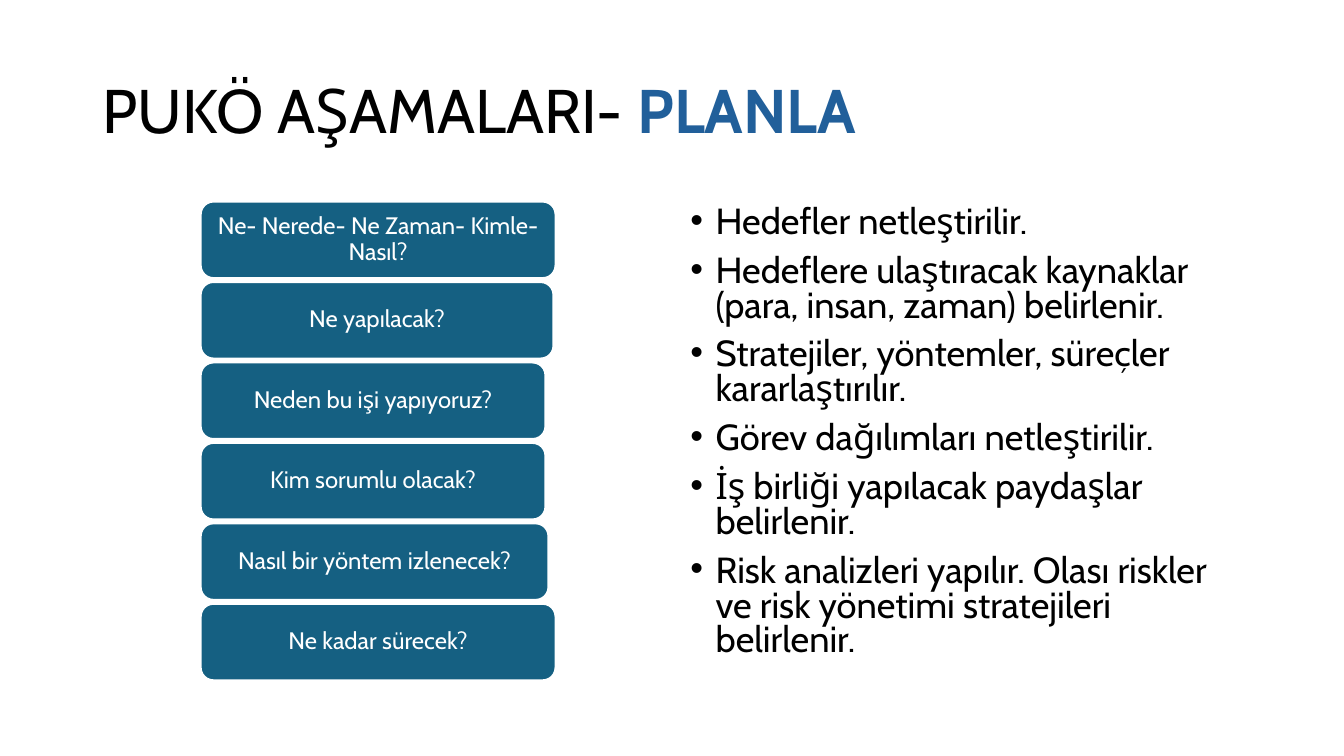
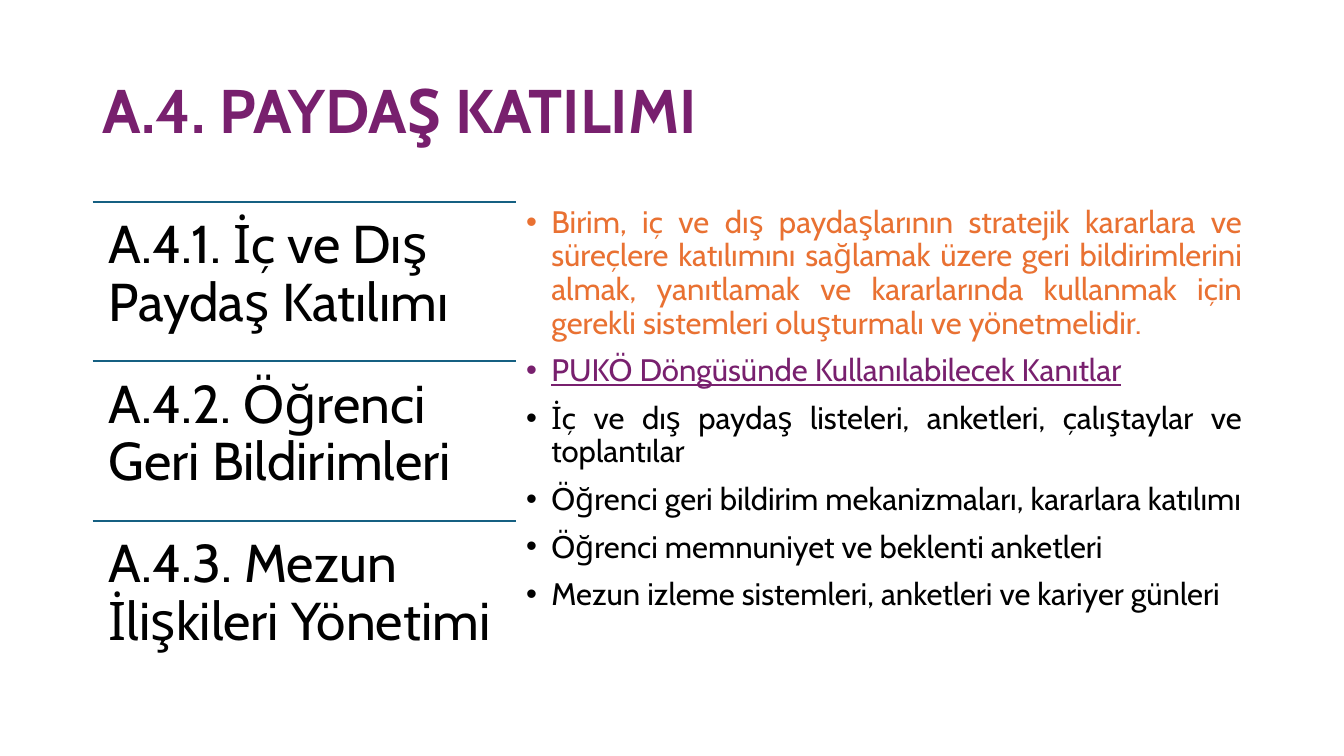
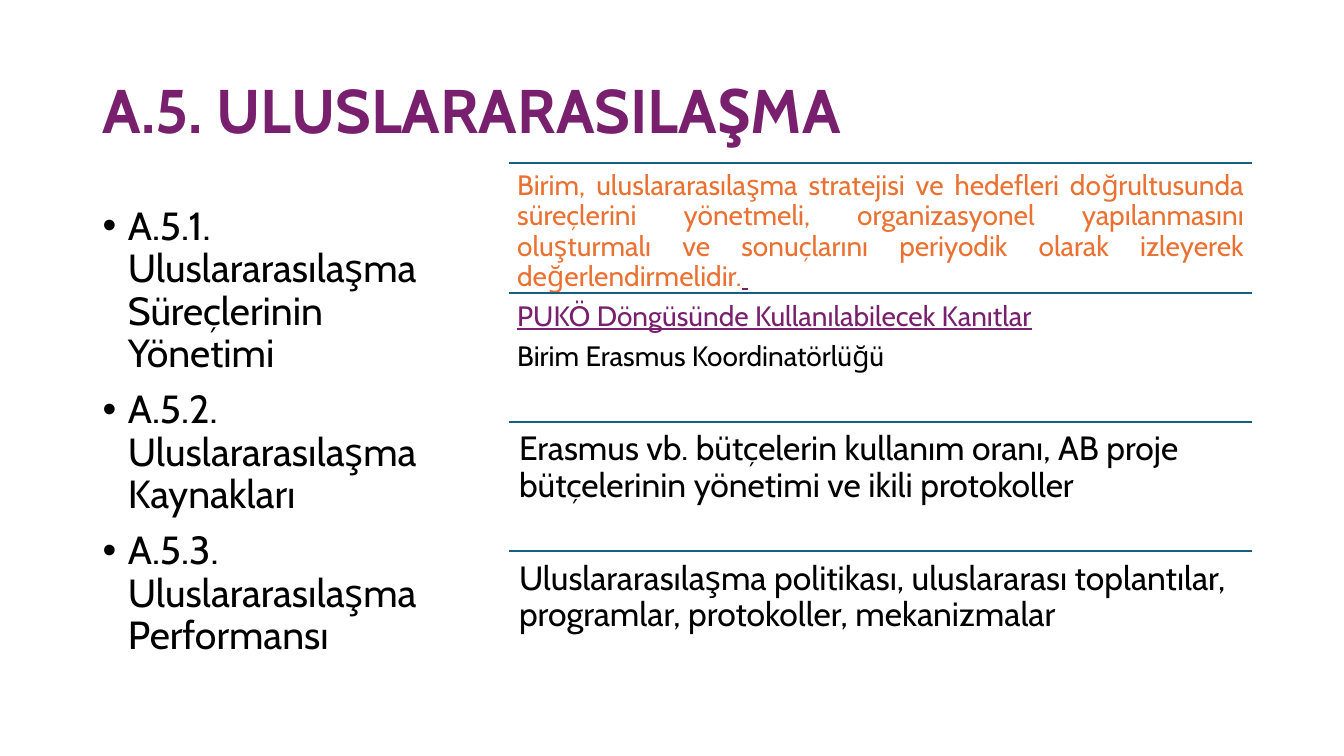
"""Build three slides on the PUKÖ cycle and its quality criteria."""
from lxml import etree
from pptx import Presentation
from pptx import util as u
from pptx.dml.color import RGBColor
from pptx.enum import shapes, text
from pptx.oxml.ns import qn

BLACK, WHITE, TEAL = "000000", "FFFFFF", "156082"
BLUE, PURPLE, ORANGE = "215F9A", "78206E", "E97132"
LEFT, CENTER, JUSTIFY = text.PP_ALIGN.LEFT, text.PP_ALIGN.CENTER, text.PP_ALIGN.JUSTIFY
TOP, MIDDLE = text.MSO_ANCHOR.TOP, text.MSO_ANCHOR.MIDDLE
EVIDENCE = [("PUKÖ Döngüsünde Kullanılabilecek Kanıtlar", {"color": PURPLE, "underline": True})]


def rgb(value):
    """Turn a hex string into a colour."""
    return RGBColor.from_string(value)


class Deck:
    """Hold the shared style and the current slide."""

    font = "Cabin"

    def __init__(self):
        """Start an empty widescreen presentation."""
        self.prs = Presentation()
        self.prs.slide_width, self.prs.slide_height = u.Inches(13.33), u.Inches(7.5)
        self.s = None

    def slide(self, title):
        """Add a blank slide with its title."""
        self.s = self.prs.slides.add_slide(self.prs.slide_layouts[6])
        self.text((0.92, 0.4, 11.5, 1.45), [title], 44, anchor=MIDDLE)

    def fill_text(self, sp, paragraphs, size, color=BLACK, align=LEFT, anchor=TOP,
                  margins=(0.1, 0.05), spacing=0.9, before=0, after=0, bullet=False):
        """Fill a shape with formatted paragraphs."""
        tf = sp.text_frame
        tf.word_wrap, tf.vertical_anchor = True, anchor
        tf.margin_left = tf.margin_right = u.Inches(margins[0])
        tf.margin_top = tf.margin_bottom = u.Inches(margins[1])
        for i, runs in enumerate(paragraphs):
            p = tf.paragraphs[0] if i == 0 else tf.add_paragraph()
            p.alignment, p.line_spacing = align, spacing
            p.space_before, p.space_after = u.Pt(before), u.Pt(after)
            if bullet:
                self.bullet(p)
            for words, changes in [(runs, {})] if isinstance(runs, str) else runs:
                r = p.add_run()
                r.text = words
                style = {"name": self.font, "size": u.Pt(size), "color": color, **changes}
                r.font.color.rgb = rgb(style.pop("color"))
                for key, value in style.items():
                    setattr(r.font, key, value)

    def bullet(self, p):
        """Give a paragraph a hanging bullet."""
        pPr = p._p.get_or_add_pPr()
        pPr.set("marL", str(u.Inches(0.25)))
        pPr.set("indent", str(-u.Inches(0.25)))
        etree.SubElement(pPr, qn("a:buFont")).set("typeface", "Arial")
        etree.SubElement(pPr, qn("a:buChar")).set("char", "•")

    def text(self, box, paragraphs, size, **style):
        """Add a text box."""
        sp = self.s.shapes.add_textbox(*map(u.Inches, box))
        self.fill_text(sp, paragraphs, size, **style)

    def bullets(self, box, paragraphs, size, **style):
        """Add a bulleted list."""
        self.text(box, paragraphs, size, before=10, bullet=True, **style)

    def card(self, box, words):
        """Add a rounded box with a centred question."""
        sp = self.s.shapes.add_shape(shapes.MSO_SHAPE.ROUNDED_RECTANGLE, *map(u.Inches, box))
        sp.shadow.inherit = False
        sp.fill.solid()
        sp.fill.fore_color.rgb = rgb(TEAL)
        sp.line.color.rgb, sp.line.width = rgb(WHITE), u.Pt(1.5)
        self.fill_text(sp, [words], 17, color=WHITE, align=CENTER, anchor=MIDDLE,
                       margins=(0.07, 0.04))

    def rule(self, x, y, width):
        """Add a horizontal line."""
        ends = map(u.Inches, (x, y, x + width, y))
        line = self.s.shapes.add_connector(shapes.MSO_CONNECTOR.STRAIGHT, *ends)
        line.line.color.rgb, line.line.width = rgb(TEAL), u.Pt(1.5)
        etree.SubElement(line._element.spPr, qn("a:effectLst"))

    def section(self, box, paragraphs, size, margin, **style):
        """Add text under a horizontal line."""
        self.rule(*box[:3])
        self.text(box, paragraphs, size, margins=(margin, margin), after=0.35 * size, **style)


def plan_slide(deck):
    """Show the planning questions and steps."""
    deck.slide([("PUKÖ AŞAMALARI- ", {}), ("PLANLA", {"color": BLUE, "bold": True})])
    questions = [
        ("Ne- Nerede- Ne Zaman- Kimle- Nasıl?", 3.52),
        ("Ne yapılacak?", 3.5),
        ("Neden bu işi yapıyoruz?", 3.42),
        ("Kim sorumlu olacak?", 3.42),
        ("Nasıl bir yöntem izlenecek?", 3.45),
        ("Ne kadar sürecek?", 3.52),
    ]
    pitch = 3.99 / 5
    for i, (words, width) in enumerate(questions):
        deck.card((1.99, 2 + i * pitch, width, 0.76), words)
    deck.bullets((6.75, 2, 5.67, 4.76), [
        "Hedefler netleştirilir.",
        "Hedeflere ulaştıracak kaynaklar (para, insan, zaman) belirlenir.",
        "Stratejiler, yöntemler, süreçler kararlaştırılır.",
        "Görev dağılımları netleştirilir.",
        "İş birliği yapılacak paydaşlar belirlenir.",
        "Risk analizleri yapılır. Olası riskler ve risk yönetimi stratejileri belirlenir.",
    ], 25.9, spacing=0.8)


def stakeholder_slide(deck):
    """Show stakeholder criteria and evidence."""
    deck.slide([("A.4. PAYDAŞ KATILIMI", {"color": PURPLE, "bold": True})])
    criteria = [
        "A.4.1. İç ve Dış Paydaş Katılımı",
        "A.4.2. Öğrenci Geri Bildirimleri",
        "A.4.3. Mezun İlişkileri Yönetimi",
    ]
    height = 4.75 / len(criteria)
    for i, words in enumerate(criteria):
        deck.section((0.92, 2 + i * height, 4.2, height), [words], 38, 0.16)
    deck.bullets((5.12, 2, 7.3, 4.76), [
        [("Birim, iç ve dış paydaşlarının stratejik kararlara ve süreçlere katılımını sağlamak "
          "üzere geri bildirimlerini almak, yanıtlamak ve kararlarında kullanmak için gerekli "
          "sistemleri oluşturmalı ve yönetmelidir. ", {"color": ORANGE})],
        EVIDENCE,
        "İç ve dış paydaş listeleri, anketleri, çalıştaylar ve toplantılar",
        "Öğrenci geri bildirim mekanizmaları, kararlara katılımı",
        "Öğrenci memnuniyet ve beklenti anketleri",
        "Mezun izleme sistemleri, anketleri ve kariyer günleri",
    ], 22.2, align=JUSTIFY)


def international_slide(deck):
    """Show internationalisation criteria and evidence."""
    deck.slide([("A.5. ULUSLARARASILAŞMA", {"color": PURPLE, "bold": True})])
    deck.bullets((0.92, 2, 3.81, 4.76), [
        "A.5.1. Uluslararasılaşma Süreçlerinin Yönetimi",
        "A.5.2. Uluslararasılaşma Kaynakları",
        "A.5.3. Uluslararasılaşma Performansı",
    ], 28)
    x, y, width, height = 5.05, 1.62, 7.37, 5.13 / 4
    deck.section((x, y, width, height), [
        [("Birim, uluslararasılaşma stratejisi ve hedefleri doğrultusunda süreçlerini yönetmeli, "
          "organizasyonel yapılanmasını oluşturmalı ve sonuçlarını periyodik olarak izleyerek "
          "değerlendirmelidir.", {"color": ORANGE}),
         (" ", {"color": PURPLE, "underline": True})],
        EVIDENCE,
        "Birim Erasmus Koordinatörlüğü",
    ], 20, 0.08, align=JUSTIFY)
    deck.rule(x, y + height, width)
    for row, words in enumerate([
        "Erasmus vb. bütçelerin kullanım oranı, AB proje bütçelerinin yönetimi ve ikili protokoller",
        "Uluslararasılaşma politikası, uluslararası toplantılar, programlar, protokoller, mekanizmalar",
    ], start=2):
        deck.section((x, y + row * height, width, height), [words], 24, 0.1)


def main():
    """Build and save the deck."""
    deck = Deck()
    plan_slide(deck)
    stakeholder_slide(deck)
    international_slide(deck)
    deck.prs.save("out.pptx")


if __name__ == "__main__":
    main()
